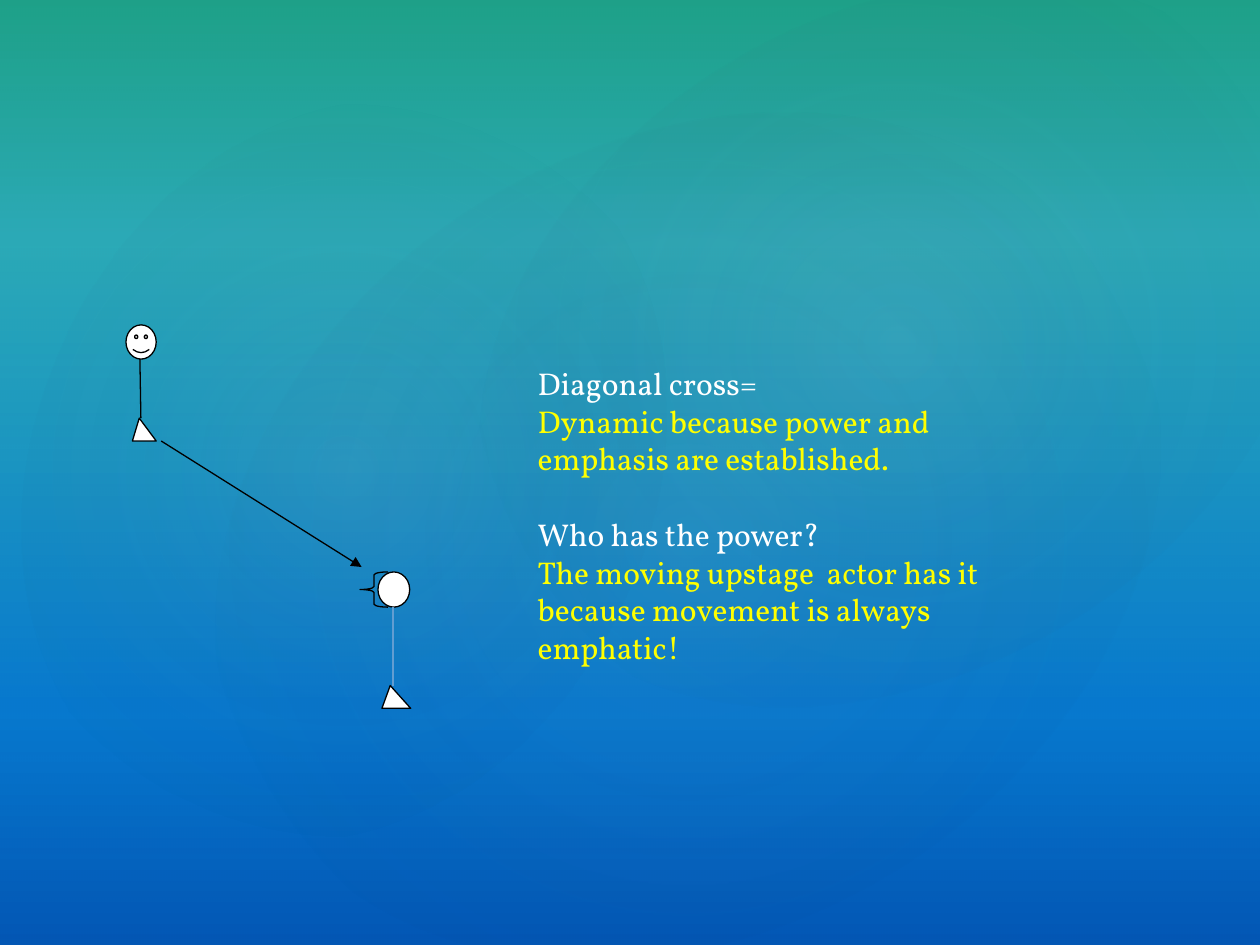
from collections import namedtuple
from dataclasses import dataclass

import lxml.etree
import pptx
import pptx.dml.color
import pptx.enum.shapes
import pptx.oxml
import pptx.oxml.ns
import pptx.util

Cm, Pt = pptx.util.Cm, pptx.util.Pt
RGB = pptx.dml.color.RGBColor.from_string
SHAPE = pptx.enum.shapes.MSO_SHAPE
qn = pptx.oxml.ns.qn

Box = namedtuple("Box", "left top width height")  # centimetres


@dataclass(frozen=True)
class Theme:
    # Gradient stops: position %, colour, opacity %
    backdrop: tuple = ((0, "03D4A8", 100), (25, "21D6E0", 100),
                       (75, "0087E6", 100), (100, "005CBF", 100))
    veil: tuple = ((0, "504652", 36), (100, "242852", 10))
    glow: str = "C4BCC6"
    glow_edge: str = "242852"
    figure: str = "FFFFFF"
    outline: str = "000000"
    still_body: str = "629DD1"
    question: str = "FFFFFF"
    answer: str = "FFFF00"
    font: str = "Vollkorn"
    text_size: float = 18
    line_width: float = 0.75


THEME = Theme()


def gradient(stops, radial=False):
    stop_xml = "".join(
        f'<a:gs pos="{pos * 1000}"><a:srgbClr val="{colour}">'
        f'<a:alpha val="{opacity * 1000}"/></a:srgbClr></a:gs>'
        for pos, colour, opacity in stops)
    direction = ('<a:path path="circle"><a:fillToRect l="50000" t="50000" '
                 'r="50000" b="50000"/></a:path>' if radial
                 else '<a:lin ang="5400000" scaled="0"/>')
    return pptx.oxml.parse_xml(
        f'<a:gradFill {pptx.oxml.ns.nsdecls("a")} rotWithShape="1">'
        f'<a:gsLst>{stop_xml}</a:gsLst>{direction}</a:gradFill>')


def set_gradient(fill, parent, stops, radial=False):
    fill.gradient()
    parent.replace(parent.find(qn("a:gradFill")), gradient(stops, radial))


def add_preset(slide, kind, box, *adjustments):
    shape = slide.shapes.add_shape(kind, *map(Cm, box))
    shape.shadow.inherit = False
    for index, value in enumerate(adjustments):
        shape.adjustments[index] = value
    return shape


def add_outlined(slide, kind, box, *adjustments, filled=True):
    shape = add_preset(slide, kind, box, *adjustments)
    if filled:
        shape.fill.solid()
        shape.fill.fore_color.rgb = RGB(THEME.figure)
    else:
        shape.fill.background()
    shape.line.color.rgb = RGB(THEME.outline)
    shape.line.width = Pt(THEME.line_width)


def add_line(slide, start, end, colour, width, arrow=False):
    line = slide.shapes.add_connector(
        pptx.enum.shapes.MSO_CONNECTOR.STRAIGHT, *map(Cm, start + end))
    line.line.color.rgb = RGB(colour)
    line.line.width = Pt(width)
    properties = line._element.spPr
    if arrow:
        lxml.etree.SubElement(properties.find(qn("a:ln")), qn("a:tailEnd"), type="triangle")
    lxml.etree.SubElement(properties, qn("a:effectLst"))


def add_backdrop(slide, box):
    """Gradient background, a veil over it and three soft tilted glows."""
    background = slide.background.fill
    set_gradient(background, slide._element.cSld.bg.bgPr, THEME.backdrop)

    veil = add_preset(slide, SHAPE.RECTANGLE, box)
    set_gradient(veil.fill, veil._element.spPr, THEME.veil)
    veil.line.fill.background()

    for left, top, width, height, tilt, opacity in (
            (3.81, 2.9, 20.12, 15.85, 328.7, 7),
            (-0.76, 3.25, 15.39, 12.45, 294.3, 8),
            (9.09, 0.33, 18.01, 13.21, 328.7, 8)):
        glow = add_preset(slide, SHAPE.OVAL,
                          Box(box.left + left, box.top + top, width, height))
        glow.rotation = tilt
        set_gradient(glow.fill, glow._element.spPr,
                     ((0, THEME.glow, opacity), (58, THEME.glow_edge, 0)), radial=True)
        glow.line.fill.background()


def add_actor(slide, box, head_height, feet_left, feet_width, body_colour,
              body_width, lean=0, smiling=False):
    """Stick figure: head across the box, feet at its base, body between."""
    feet_height = 0.46
    head = Box(box.left, box.top, box.width, head_height)
    feet_top = box.top + box.height - feet_height
    if smiling:
        add_outlined(slide, SHAPE.SMILEY_FACE, head, 0.047)
    else:
        add_outlined(slide, SHAPE.OVAL, head)
    body_x = box.left + 0.3
    add_line(slide, (body_x - lean, box.top + head_height), (body_x, feet_top),
             body_colour, body_width)
    add_outlined(slide, SHAPE.ISOSCELES_TRIANGLE,
                 Box(box.left + feet_left, feet_top, feet_width, feet_height), 0.288)


def add_cross(slide, box):
    """The upstage actor crossing diagonally towards the downstage one."""
    add_actor(slide, Box(box.left, box.top, 0.61, 2.34), 0.69, 0.13, 0.48,
              THEME.outline, THEME.line_width, lean=0.02, smiling=True)
    add_line(slide, (box.left + 0.71, box.top + 2.34),
             (box.left + 4.75, box.top + 4.88),
             THEME.outline, THEME.line_width, arrow=True)
    still = Box(box.left + 5.08, box.top + 4.98, 0.64, 2.75)
    add_actor(slide, still, 0.71, 0.08, 0.58, THEME.still_body, 1)
    add_outlined(slide, SHAPE.LEFT_BRACE,
                 Box(still.left - 0.36, still.top, 0.56, 0.71), 0.106, 0.5, filled=False)


def add_explanation(slide, box):
    frame = slide.shapes.add_textbox(*map(Cm, box)).text_frame
    frame.word_wrap = True
    lines = (
        ("Diagonal cross=", THEME.question, 0),
        ("Dynamic because power and emphasis are established.", THEME.answer, 0),
        ("Who has the power?", THEME.question, 21.5),
        ("The moving upstage  actor has it because movement is always emphatic!",
         THEME.answer, 0),
    )
    for index, (text, colour, gap) in enumerate(lines):
        paragraph = frame.add_paragraph() if index else frame.paragraphs[0]
        paragraph.space_before = Pt(gap)
        run = paragraph.add_run()
        run.text = text
        run.font.name = THEME.font
        run.font.size = Pt(THEME.text_size)
        run.font.color.rgb = RGB(colour)


def main():
    deck = pptx.Presentation()
    deck.slide_width, deck.slide_height = Cm(25.4), Cm(19.05)
    blank = deck.slide_layouts[6]
    slide = deck.slides.add_slide(blank)
    add_backdrop(slide, Box(0, 0, 25.4, 19.05))
    add_cross(slide, Box(2.54, 6.55, 5.74, 7.73))
    add_explanation(slide, Box(10.59, 7.21, 10.59, 6.4))
    deck.save("out.pptx")


if __name__ == "__main__":
    main()
